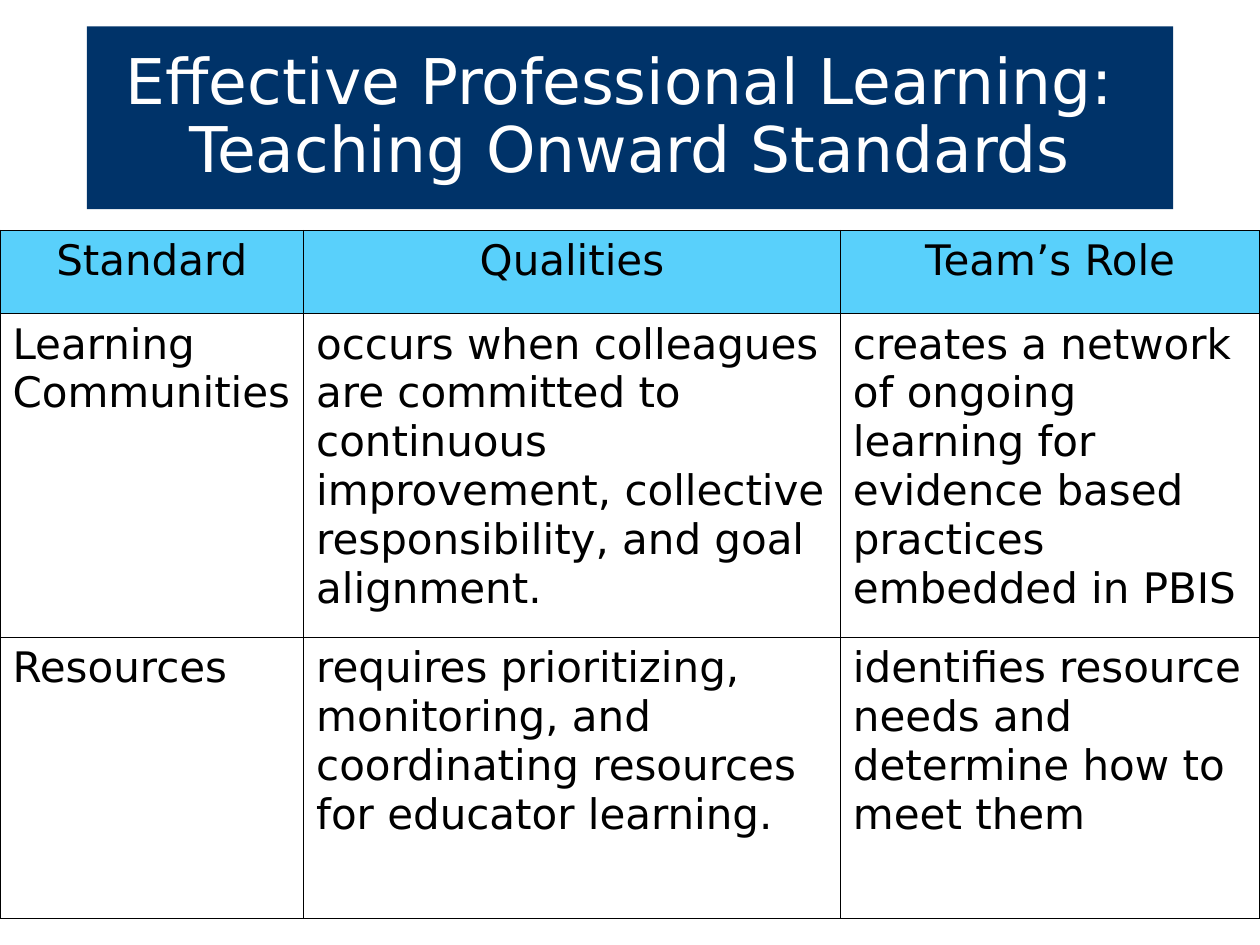
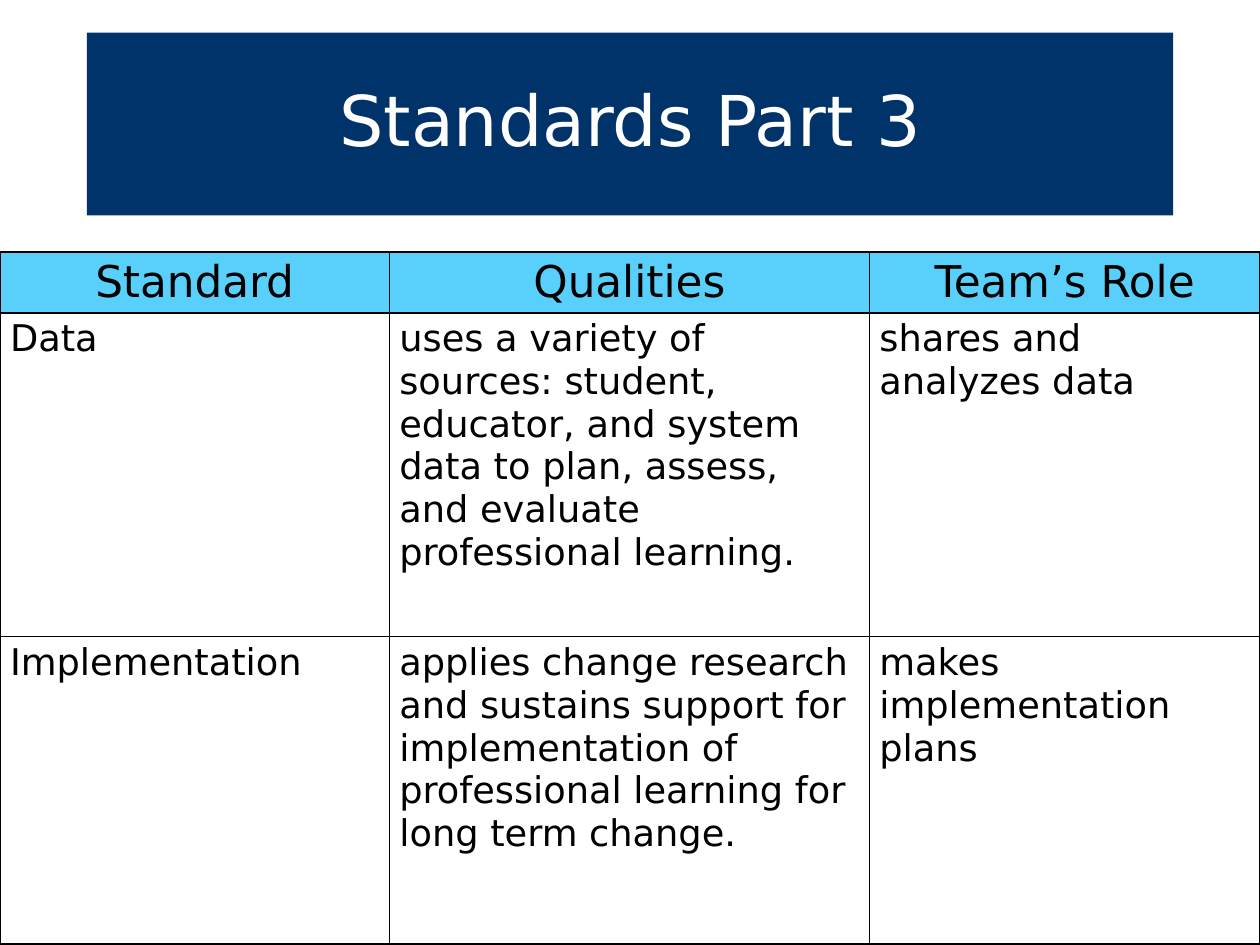
from dataclasses import dataclass

from lxml.etree import SubElement
from pptx import Presentation
from pptx.dml.color import RGBColor
from pptx.enum.text import MSO_ANCHOR, MSO_AUTO_SIZE, PP_ALIGN
from pptx.oxml.ns import qn
from pptx.presentation import Presentation as Deck
from pptx.slide import Slide
from pptx.table import _Cell
from pptx.text.text import _Paragraph
from pptx.util import Inches, Pt


@dataclass(frozen=True)
class Theme:
    font: str = "DejaVu Sans"
    navy: str = "003369"
    sky: str = "59D0FB"
    white: str = "FFFFFF"
    black: str = "000000"
    border: float = 1


@dataclass(frozen=True)
class StandardsSlide:
    title_lines: tuple[str, ...]
    title_top: float
    title_size: int
    table_top: float
    columns: tuple[float, ...]
    rows: tuple[float, ...]
    header_size: int
    body_size: int
    inset: float  # horizontal cell margin; the vertical one is half of it
    standards: tuple[tuple[str, str, str], ...]


THEME = Theme()
HEADER = ("Standard", "Qualities", "Team’s Role")

SLIDES = (
    StandardsSlide(
        title_lines=("Effective Professional Learning: ", "Teaching Onward Standards"),
        title_top=0.21, title_size=36, table_top=1.83,
        columns=(2.41, 4.26, 3.33), rows=(0.66, 2.57, 2.23),
        header_size=24, body_size=24, inset=0.1,
        standards=(
            ("Learning Communities",
             "occurs when colleagues are committed to continuous improvement, "
             "collective responsibility, and goal alignment.",
             "creates a network of ongoing learning for evidence based practices "
             "embedded in PBIS"),
            ("Resources",
             "requires prioritizing, monitoring, and coordinating resources "
             "for educator learning.",
             "identifies resource needs and determine how to meet them"),
        ),
    ),
    StandardsSlide(
        title_lines=("Standards Part 3",),
        title_top=0.26, title_size=40, table_top=2,
        columns=(3.09, 3.81, 3.1), rows=(0.48, 2.57, 2.44),
        header_size=25, body_size=21, inset=0.08,
        standards=(
            ("Data",
             "uses a variety of sources: student, educator, and system data "
             "to plan, assess, and evaluate professional learning.",
             "shares and analyzes data"),
            ("Implementation",
             "applies change research and sustains support for implementation "
             "of professional learning for long term change.",
             "makes implementation plans"),
        ),
    ),
)


def add_text(paragraph: _Paragraph, text: str, size: int, color: str) -> None:
    run = paragraph.add_run()
    run.text = text
    run.font.name = THEME.font
    run.font.size = Pt(size)
    run.font.color.rgb = RGBColor.from_string(color)


def add_borders(cell: _Cell) -> None:
    properties = cell._tc.get_or_add_tcPr()
    for side in ("a:lnL", "a:lnR", "a:lnT", "a:lnB"):
        line = SubElement(properties, qn(side), w=str(Pt(THEME.border)))
        fill = SubElement(line, qn("a:solidFill"))
        SubElement(fill, qn("a:srgbClr"), val=THEME.black)


def add_title(slide: Slide, content: StandardsSlide) -> None:
    title = slide.shapes.title
    title.left, title.top = Inches(0.69), Inches(content.title_top)
    title.width, title.height = Inches(8.62), Inches(1.45)
    title.fill.solid()
    title.fill.fore_color.rgb = RGBColor.from_string(THEME.navy)

    frame = title.text_frame
    frame.auto_size = MSO_AUTO_SIZE.NONE
    frame.vertical_anchor = MSO_ANCHOR.MIDDLE
    paragraph = frame.paragraphs[0]
    paragraph.alignment = PP_ALIGN.CENTER
    paragraph.line_spacing = 0.9
    for index, line in enumerate(content.title_lines):
        if index:
            paragraph.add_line_break()
        add_text(paragraph, line, content.title_size, THEME.white)


def fill_cell(cell: _Cell, text: str, content: StandardsSlide, is_header: bool) -> None:
    cell.margin_left = cell.margin_right = Inches(content.inset)
    cell.margin_top = cell.margin_bottom = Inches(content.inset / 2)
    add_borders(cell)
    paragraph = cell.text_frame.paragraphs[0]
    if is_header:
        cell.fill.solid()
        cell.fill.fore_color.rgb = RGBColor.from_string(THEME.sky)
        paragraph.alignment = PP_ALIGN.CENTER
    else:
        cell.fill.background()
    size = content.header_size if is_header else content.body_size
    add_text(paragraph, text, size, THEME.black)


def add_standards_table(slide: Slide, content: StandardsSlide) -> None:
    table = slide.shapes.add_table(
        len(content.rows), len(content.columns),
        Inches(0), Inches(content.table_top),
        Inches(sum(content.columns)), Inches(sum(content.rows)),
    ).table
    for column, width in zip(table.columns, content.columns):
        column.width = Inches(width)
    for row, height in zip(table.rows, content.rows):
        row.height = Inches(height)
    for row_index, texts in enumerate((HEADER, *content.standards)):
        for column_index, text in enumerate(texts):
            fill_cell(table.cell(row_index, column_index), text, content, row_index == 0)


def add_standards_slide(deck: Deck, content: StandardsSlide) -> None:
    slide = deck.slides.add_slide(deck.slide_layouts.get_by_name("Title Only"))
    add_title(slide, content)
    add_standards_table(slide, content)


def main() -> None:
    deck = Presentation()
    deck.slide_width, deck.slide_height = Inches(10), Inches(7.5)
    for content in SLIDES:
        add_standards_slide(deck, content)
    deck.save("out.pptx")


if __name__ == "__main__":
    main()
